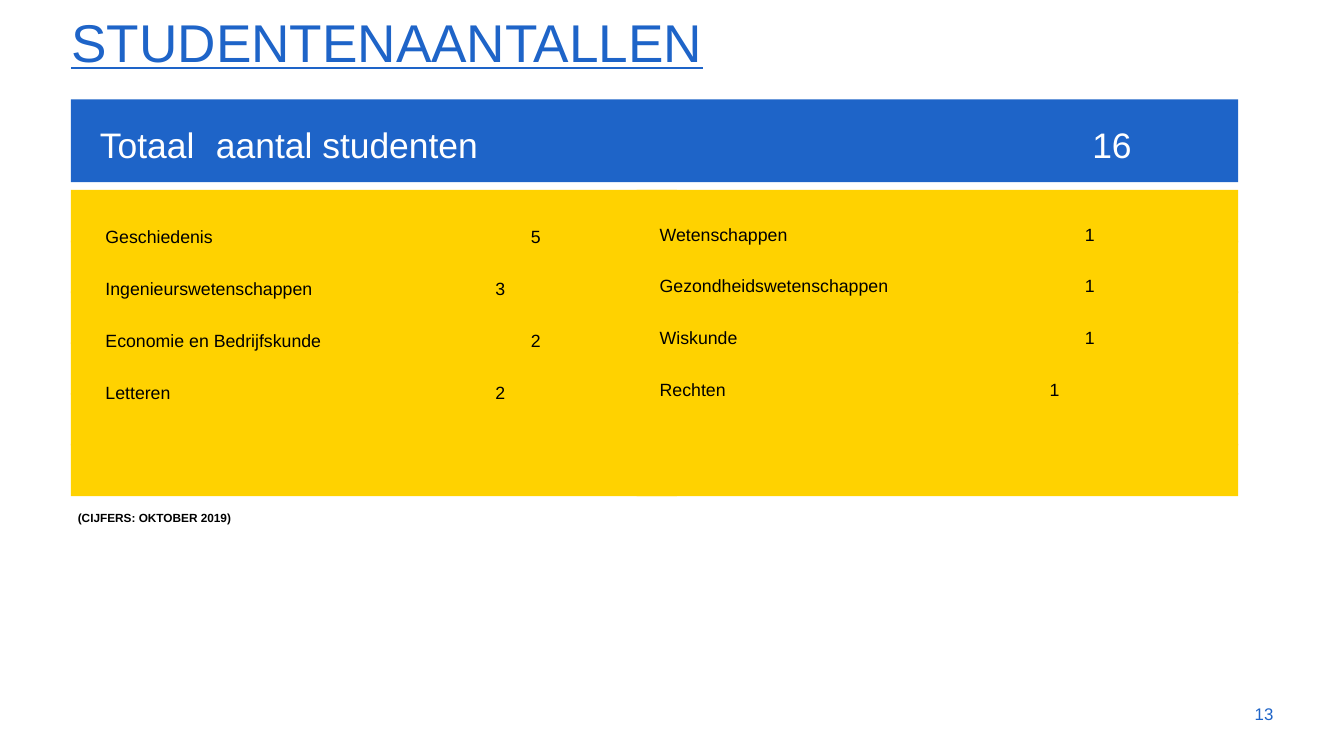
from dataclasses import dataclass

from lxml import etree
from pptx import Presentation
from pptx.dml.color import RGBColor
from pptx.enum.shapes import MSO_SHAPE
from pptx.enum.text import MSO_ANCHOR, PP_ALIGN
from pptx.oxml.ns import qn
from pptx.util import Cm, Pt

RECTANGLE = MSO_SHAPE.RECTANGLE
TOP, MIDDLE, BOTTOM = MSO_ANCHOR.TOP, MSO_ANCHOR.MIDDLE, MSO_ANCHOR.BOTTOM
LEFT, RIGHT = PP_ALIGN.LEFT, PP_ALIGN.RIGHT

COLORS = {"blue": "1E64C8", "yellow": "FFD200", "black": "000000", "white": "FFFFFF"}
FONT = "Arial"
ROW_COUNT, ROW_TOP, ROW_PITCH, ROW_HEIGHT = 6, 6.81, 1.82, 1.88
NEAR_TAB, FAR_TAB = 13.97, 15.24


@dataclass
class Band:
    left: float
    top: float
    width: float
    height: float
    color: str


@dataclass
class Line:
    text: str
    tabs: tuple[float, ...] = ()


@dataclass
class TextBlock:
    left: float
    top: float
    width: float
    height: float
    lines: list[Line]
    size: float
    color: str
    inset_left: float = 0.25
    inset_top: float = 0.13
    anchor: MSO_ANCHOR = TOP
    align: PP_ALIGN = LEFT
    line_spacing: float = 1.0
    space_before: float = 0
    bold: bool = False
    underline: bool = False


def count_lines(*rows: tuple[str, int, float]) -> list[Line]:
    return [Line(f"{name}\t{count}", (tab,)) for name, count, tab in rows]


def add_band(page, band: Band) -> None:
    shape = page.shapes.add_shape(
        RECTANGLE, Cm(band.left), Cm(band.top), Cm(band.width), Cm(band.height))
    shape.shadow.inherit = False
    shape.fill.solid()
    shape.fill.fore_color.rgb = RGBColor.from_string(COLORS[band.color])
    shape.line.fill.background()


def add_tabs(para, tabs: tuple[float, ...]) -> None:
    if tabs:
        tab_list = etree.SubElement(para._p.get_or_add_pPr(), qn("a:tabLst"))
        for position in tabs:
            etree.SubElement(tab_list, qn("a:tab"), pos=str(Cm(position)), algn="l")


def add_text(page, block: TextBlock) -> None:
    box = page.shapes.add_textbox(
        Cm(block.left), Cm(block.top), Cm(block.width), Cm(block.height))
    frame = box.text_frame
    frame_format = {"word_wrap": True, "vertical_anchor": block.anchor,
                    "margin_left": Cm(block.inset_left), "margin_top": Cm(block.inset_top)}
    for name, value in frame_format.items():
        setattr(frame, name, value)
    font_format = {"name": FONT, "size": Pt(block.size),
                   "bold": block.bold, "underline": block.underline}
    for index, line in enumerate(block.lines):
        para = frame.add_paragraph() if index else frame.paragraphs[0]
        add_tabs(para, line.tabs)
        para.alignment = block.align
        para.line_spacing = block.line_spacing
        if index:
            para.space_before = Pt(block.space_before)
        span = para.add_run()
        span.text = line.text
        for name, value in font_format.items():
            setattr(span.font, name, value)
        span.font.color.rgb = RGBColor.from_string(COLORS[block.color])


# Yellow rows in two columns, and the blue total bar
BANDS = [
    Band(left, ROW_TOP + row * ROW_PITCH, width, ROW_HEIGHT, "yellow")
    for left, width in ((22.81, 21.56), (2.54, 21.72))
    for row in range(ROW_COUNT)
] + [Band(2.54, 3.56, 41.83, 2.97, "blue")]

# Student numbers per faculty
FACULTIES_LEFT = count_lines(
    ("Geschiedenis", 5, FAR_TAB),
    ("Ingenieurswetenschappen", 3, NEAR_TAB),
    ("Economie en Bedrijfskunde", 2, FAR_TAB),
    ("Letteren", 2, NEAR_TAB),
)
FACULTIES_RIGHT = count_lines(
    ("Wetenschappen", 1, FAR_TAB),
    ("Gezondheidswetenschappen", 1, FAR_TAB),
    ("Wiskunde", 1, FAR_TAB),
    ("Rechten", 1, NEAR_TAB),
)

TEXTS = [
    # Title and page number
    TextBlock(2.31, 0.38, 43.64, 2.39, [Line("STUDENTENAANTALLEN")], 54, "blue",
              anchor=BOTTOM, line_spacing=0.9, underline=True),
    TextBlock(43.31, 24.87, 2.57, 1.45, [Line("13")], 17.1, "blue",
              anchor=MIDDLE, align=RIGHT),
    # Faculty lists
    *(TextBlock(left, top, 22.78, 13.82, lines, 18, "black",
                inset_left=0.48, inset_top=1.1, space_before=31.1)
      for left, top, lines in ((23.16, 6.91, FACULTIES_RIGHT),
                               (3.3, 7.01, FACULTIES_LEFT))),
    # Source date and total
    TextBlock(2.54, 18.19, 28.24, 0.76, [Line("(CIJFERS: OKTOBER 2019)")], 12, "black",
              bold=True),
    TextBlock(3.1, 3.81, 41.2, 2.41,
              [Line("Totaal\taantal studenten\t16", (4.16, 35.56))], 36, "white",
              inset_left=0.48, inset_top=0.59),
]


def main() -> None:
    deck = Presentation()
    deck.slide_width, deck.slide_height = Cm(48.16), Cm(27.1)
    page = deck.slides.add_slide(deck.slide_layouts[6])
    for band in BANDS:
        add_band(page, band)
    for block in TEXTS:
        add_text(page, block)
    deck.save("out.pptx")


if __name__ == "__main__":
    main()
